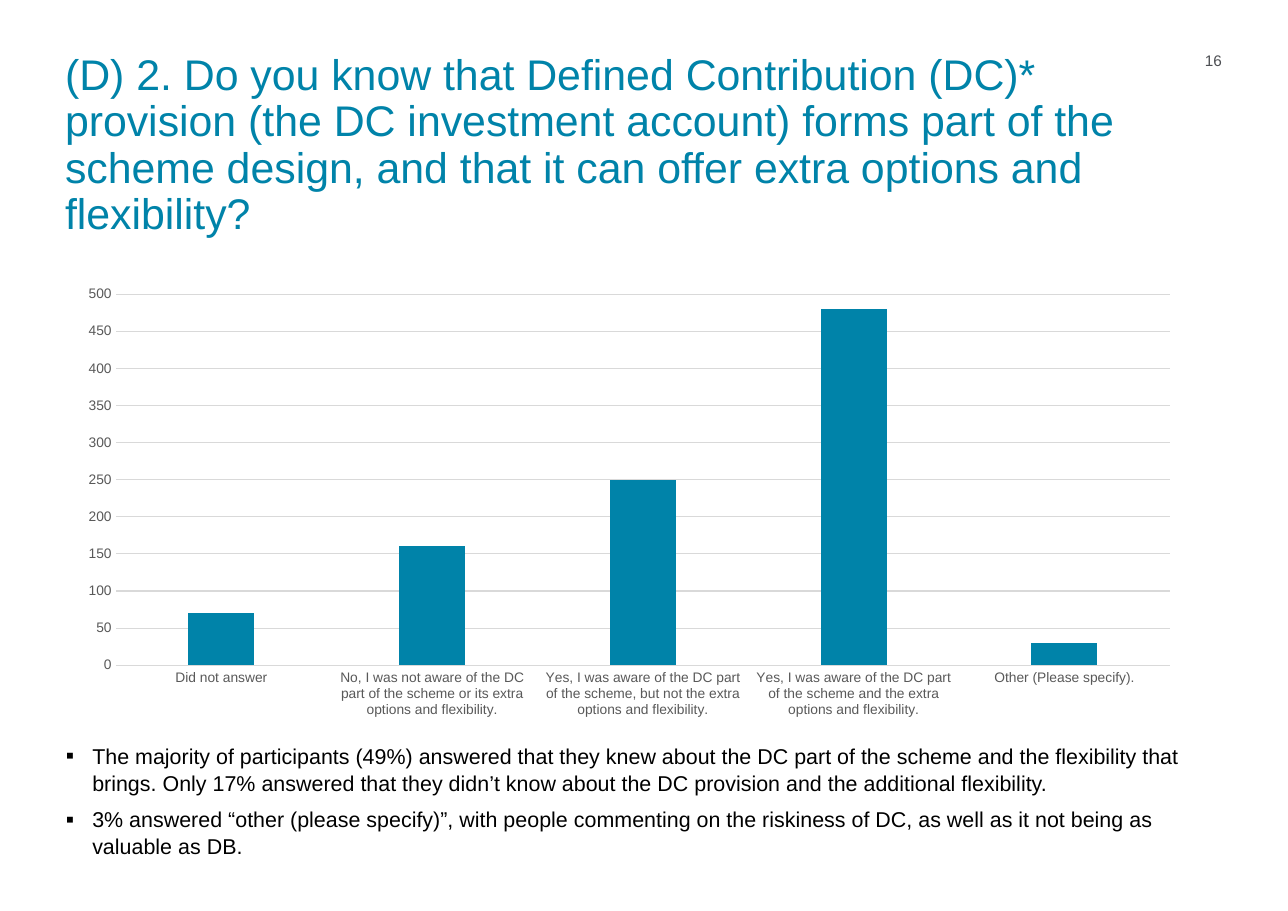
from lxml import etree
from pptx import Presentation
from pptx.chart.data import CategoryChartData
from pptx.dml.color import RGBColor
from pptx.enum.chart import XL_CHART_TYPE, XL_TICK_MARK
from pptx.enum.text import MSO_ANCHOR, MSO_AUTO_SIZE, PP_ALIGN
from pptx.oxml.ns import qn
from pptx.util import Pt

COLUMNS = XL_CHART_TYPE.COLUMN_CLUSTERED
NO_TICK = XL_TICK_MARK.NONE
TOP = MSO_ANCHOR.TOP
NO_FIT = MSO_AUTO_SIZE.NONE
LEFT, RIGHT = PP_ALIGN.LEFT, PP_ALIGN.RIGHT
TEAL, BLACK, GREY, GRID, NUMBER = "0083A9", "000000", "595959", "D9D9D9", "4D4F53"


def rgb(value):
    return RGBColor.from_string(value)


def fill_text(sp, box, texts, size, color, spacing, align=LEFT):
    sp.left, sp.top, sp.width, sp.height = [Pt(v) for v in box]
    tf = sp.text_frame
    tf.word_wrap, tf.auto_size, tf.vertical_anchor = True, NO_FIT, TOP
    tf.margin_left = tf.margin_top = tf.margin_right = tf.margin_bottom = 0
    tf.text = "\n".join(texts)
    for p in tf.paragraphs:
        p.alignment, p.line_spacing = align, spacing
        p.font.size, p.font.name = Pt(size), "Arial"
        p.font.bold = False
        p.font.color.rgb = rgb(color)
    return tf


prs = Presentation()
prs.slide_width, prs.slide_height = Pt(841.68), Pt(595.44)
s = prs.slides.add_slide(prs.slide_layouts[5])

# Title, with no-break spaces that hold its phrases together
title = (
    "(D) 2. Do you know that Defined Contribution "
    "(DC)* provision (the DC investment account) forms part "
    "of the scheme design, and that it can offer extra options "
    "and flexibility?"
)
fill_text(s.shapes.title, (42.5, 35, 749.5, 60), [title], 28, TEAL, 0.9)

# Page number
sp = s.shapes.add_textbox(0, 0, 0, 0)
fill_text(sp, (770.5, 35, 28, 14.5), ["16"], 10, NUMBER, 0.9, RIGHT)

# Column chart of the answers
answers = {
    "Did not answer": 70,
    "No, I was not aware of the DC part of the scheme or its extra options and flexibility.": 160,
    "Yes, I was aware of the DC part of the scheme, but not the extra options and flexibility.": 250,
    "Yes, I was aware of the DC part of the scheme and the extra options and flexibility.": 480,
    "Other (Please specify).": 30,
}
data = CategoryChartData()
data.categories = list(answers)
data.add_series("Series 1", list(answers.values()))
chart = s.shapes.add_chart(COLUMNS, Pt(43.2), Pt(181.2), Pt(736), Pt(293.8), data).chart
chart.has_title = chart.has_legend = False
chart.font.size, chart.font.name = Pt(10), "Arial"
chart.font.color.rgb = rgb(BLACK)

plot = chart.plots[0]
plot.gap_width, plot.overlap, plot.vary_by_categories = 219, -27, False
bars = plot.series[0].format.fill
bars.solid()
bars.fore_color.rgb = rgb(TEAL)

for axis in (chart.category_axis, chart.value_axis):
    axis.major_tick_mark = axis.minor_tick_mark = NO_TICK
    font = axis.tick_labels.font
    font.size, font.name = Pt(9), "Arial"
    font.color.rgb = rgb(GREY)

values = chart.value_axis
values.minimum_scale, values.maximum_scale, values.major_unit = 0, 500, 50
values.format.line.fill.background()
for line in (chart.category_axis.format.line, values.major_gridlines.format.line):
    line.width = Pt(0.75)
    line.color.rgb = rgb(GRID)

# Findings
findings = [
    "The majority of participants (49%) answered that they knew about the DC part of "
    "the scheme and the flexibility that brings. Only 17% answered that they didn’t "
    "know about the DC provision and the additional flexibility.",
    "3% answered “other (please specify)”, with people commenting on the riskiness of "
    "DC, as well as it not being as valuable as DB.",
]
sp = s.shapes.add_textbox(0, 0, 0, 0)
tf = fill_text(sp, (43, 484.8, 757, 100), findings, 14, BLACK, 1.05)
tf.paragraphs[1].space_before = Pt(6)
for p in tf.paragraphs:
    pPr = p._p.get_or_add_pPr()
    pPr.set("marL", str(Pt(17.3)))
    pPr.set("indent", str(Pt(-17.3)))
    marks = [
        etree.Element(qn("a:buSzPct"), val="110000"),
        etree.Element(qn("a:buFont"), typeface="Arial"),
        etree.Element(qn("a:buChar"), char="▪"),
    ]
    for mark in marks:
        pPr.insert(len(pPr) - 1, mark)

prs.save("out.pptx")
